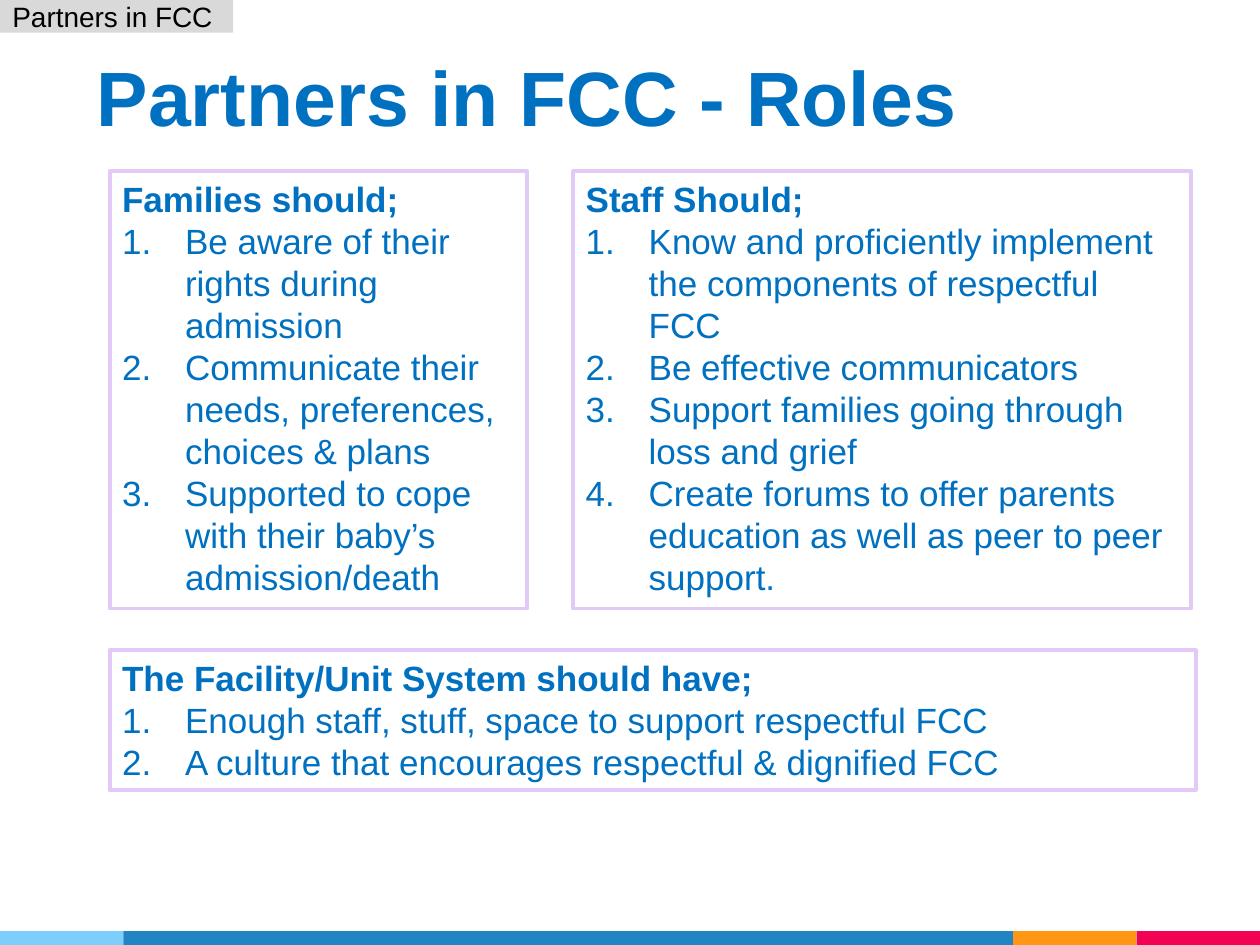
from lxml.etree import SubElement
from pptx import Presentation
from pptx.dml.color import RGBColor
from pptx.enum.shapes import MSO_SHAPE
from pptx.enum.text import MSO_ANCHOR, PP_ALIGN
from pptx.oxml.ns import qn
from pptx.util import Inches, Pt

BLUE = "0070C0"


def color(code):
    return RGBColor.from_string(code)


def add_rect(slide, box, fill=None, line=None):
    shape = slide.shapes.add_shape(MSO_SHAPE.RECTANGLE, *map(Inches, box))
    shape.shadow.inherit = False
    if fill:
        shape.fill.solid()
        shape.fill.fore_color.rgb = color(fill)
    else:
        shape.fill.background()
    if line:
        shape.line.color.rgb = color(line)
        shape.line.width = Pt(2.25)
    else:
        shape.line.fill.background()
    return shape


def write(para, text, size, code, bold=False):
    para.alignment = PP_ALIGN.LEFT
    run = para.add_run()
    run.text = text
    run.font.name = "Arial"
    run.font.size = Pt(size)
    run.font.bold = bold
    run.font.color.rgb = color(code)


def number(para):
    props = para._p.get_or_add_pPr()
    props.set("marL", str(Inches(0.5)))
    props.set("indent", str(Inches(-0.5)))
    SubElement(props, qn("a:buFont"), typeface="+mj-lt")
    SubElement(props, qn("a:buAutoNum"), type="arabicPeriod")


# Coloured strip along the bottom edge
def add_strip(slide, box):
    left, top, width, height = box
    end = 0.98
    parts = [(end, "7ECEFD"), (width - 3 * end, "2185C5"),
             (end, "FF9715"), (end, "F20253")]
    for part, fill in parts:
        add_rect(slide, (left, top, part, height), fill)
        left += part


# Slide title
def add_title(slide, box, text):
    frame = slide.shapes.add_textbox(*map(Inches, box)).text_frame
    frame.word_wrap = True
    frame.vertical_anchor = MSO_ANCHOR.BOTTOM
    frame.margin_top = frame.margin_bottom = Inches(0.1)
    write(frame.paragraphs[0], text, 44, BLUE, True)


# Outlined panel: a heading over a numbered list
def add_panel(slide, box, head, items):
    frame = add_rect(slide, box, line="E2C9F7").text_frame
    frame.word_wrap = True
    frame.vertical_anchor = MSO_ANCHOR.TOP
    write(frame.paragraphs[0], head, 20, BLUE, True)
    for item in items:
        para = frame.add_paragraph()
        number(para)
        write(para, item, 20, BLUE)


# Section tag in the top corner
def add_tag(slide, box, text):
    frame = add_rect(slide, box, "D9D9D9").text_frame
    frame.word_wrap = True
    frame.vertical_anchor = MSO_ANCHOR.MIDDLE
    write(frame.paragraphs[0], text, 16, "000000")


def main():
    deck = Presentation()
    deck.slide_width, deck.slide_height = Inches(10), Inches(7.5)
    slide = deck.slides.add_slide(deck.slide_layouts[6])

    add_strip(slide, (0, 7.39, 10, 0.11))
    add_title(slide, (0.67, 0.49, 8.63, 0.74), "Partners in FCC - Roles")
    add_panel(slide, (0.87, 1.36, 3.31, 3.47), "Families should;", [
        "Be aware of their rights during admission",
        "Communicate their needs, preferences, choices & plans",
        "Supported to cope with their baby’s admission/death",
    ])
    add_panel(slide, (4.55, 1.36, 4.9, 3.47), "Staff Should;", [
        "Know and proficiently implement the components of respectful FCC",
        "Be effective communicators",
        "Support families going through loss and grief",
        "Create forums to offer parents education as well as peer to peer "
        "support.",
    ])
    add_panel(slide, (0.87, 5.16, 8.62, 1.11),
              "The Facility/Unit System should have;", [
        "Enough staff, stuff, space to support respectful FCC",
        "A culture that encourages respectful & dignified FCC",
    ])
    add_tag(slide, (0, 0, 1.85, 0.26), "Partners in FCC")
    deck.save("out.pptx")


if __name__ == "__main__":
    main()
